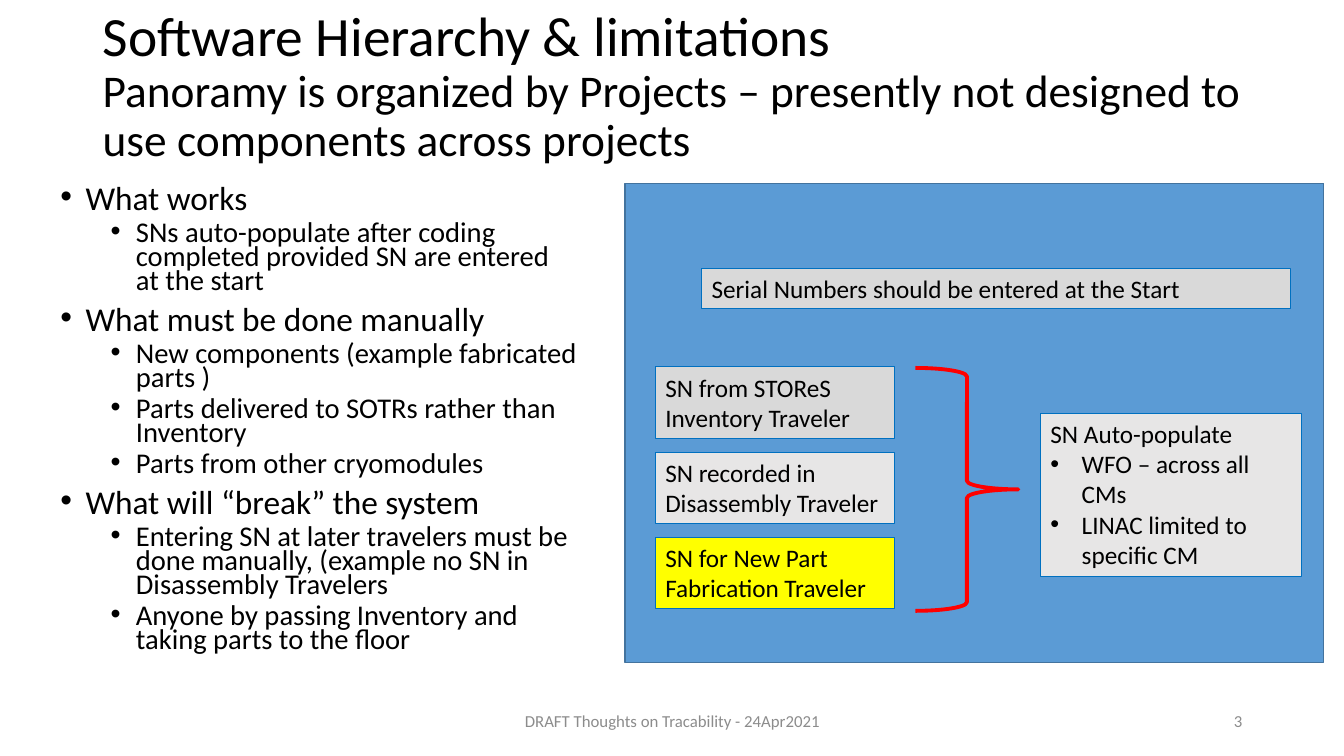
"""Build the software hierarchy and limitations slide."""
from dataclasses import dataclass

from lxml import etree
from pptx import Presentation
from pptx import util as u
from pptx.dml.color import RGBColor
from pptx.enum import shapes, text
from pptx.oxml import ns


@dataclass(frozen=True)
class Theme:
    """Hold the colours, type sizes and font of the slide."""
    font: str = "Calibri"
    ink: str = "000000"
    muted: str = "8C8C8C"
    panel: str = "5B9BD5"
    panel_line: str = "43739E"
    box_line: str = "0070C0"
    grey: str = "D9D9D9"
    light: str = "E7E6E6"
    yellow: str = "FFFF00"
    red: str = "FF0000"
    title: float = 39.6
    subtitle: float = 32.4
    topic: float = 23.8
    detail: float = 20.4
    label: float = 18
    footer: float = 12


THEME = Theme()

TOPICS = {
    "What works": [
        "SNs auto-populate after coding completed provided SN are entered at the start",
    ],
    "What must be done manually": [
        "New components (example fabricated parts )",
        "Parts delivered to SOTRs rather than Inventory",
        "Parts from other cryomodules",
    ],
    "What will “break” the system": [
        "Entering SN at later travelers must be done manually, "
        "(example no SN in Disassembly Travelers",
        "Anyone by passing Inventory and taking parts to the floor",
    ],
}

SOURCES = [
    (["SN from STOReS", "Inventory Traveler"], THEME.grey),
    (["SN recorded in", "Disassembly Traveler"], THEME.light),
    (["SN for New Part", "Fabrication Traveler"], THEME.yellow),
]


def set_all(target, values):
    """Set each named attribute of the target."""
    for name, value in values.items():
        setattr(target, name, value)


def add_run(paragraph, words, size, color=THEME.ink):
    """Add a run in the theme font."""
    run = paragraph.add_run()
    run.text = words
    set_all(run.font, {"name": THEME.font, "size": u.Pt(size)})
    run.font.color.rgb = RGBColor.from_string(color)


def add_bullet(paragraph, left, hanging):
    """Give the paragraph a bullet with a hanging indent."""
    properties = paragraph._p.get_or_add_pPr()
    properties.set("marL", str(u.Inches(left)))
    properties.set("indent", str(-u.Inches(hanging)))
    font = etree.SubElement(properties, ns.qn("a:buFont"))
    font.set("typeface", "Arial")
    etree.SubElement(properties, ns.qn("a:buChar")).set("char", "•")


def next_paragraph(frame):
    """Return the unused first paragraph or a new one."""
    first = frame.paragraphs[0]
    return frame.add_paragraph() if first.runs else first


def add_text_box(slide, place, anchor=text.MSO_ANCHOR.TOP):
    """Add a wrapping text box and return its text frame."""
    frame = slide.shapes.add_textbox(*map(u.Inches, place)).text_frame
    set_all(frame, {"word_wrap": True, "vertical_anchor": anchor})
    return frame


def add_figure(slide, kind, place, fill, line, width):
    """Add a preset shape with its fill and outline."""
    shape = slide.shapes.add_shape(kind, *map(u.Inches, place))
    shape.shadow.inherit = False
    if fill:
        shape.fill.solid()
        shape.fill.fore_color.rgb = RGBColor.from_string(fill)
    else:
        shape.fill.background()
    shape.line.color.rgb = RGBColor.from_string(line)
    shape.line.width = u.Pt(width)
    return shape


def add_label(slide, place, fill, lines, bullets=()):
    """Add an outlined box with plain lines followed by bullets."""
    shape = add_figure(slide, shapes.MSO_SHAPE.RECTANGLE, place, fill, THEME.box_line, 0.75)
    frame = shape.text_frame
    set_all(frame, {"word_wrap": True, "vertical_anchor": text.MSO_ANCHOR.TOP})
    for words in [*lines, *bullets]:
        paragraph = next_paragraph(frame)
        paragraph.alignment = text.PP_ALIGN.LEFT
        if words in bullets:
            add_bullet(paragraph, 0.31, 0.31)
        add_run(paragraph, words, THEME.label)


def add_title(slide):
    """Add the title with its subtitle on the following lines."""
    paragraph = add_text_box(slide, (0.92, 0.14, 11.5, 1.45), text.MSO_ANCHOR.MIDDLE).paragraphs[0]
    paragraph.line_spacing = 0.9
    add_run(paragraph, "Software Hierarchy & limitations", THEME.title)
    paragraph.add_line_break()
    add_run(paragraph, "Panoramy is organized by Projects – presently not designed "
            "to use components across projects", THEME.subtitle)


def add_topics(slide):
    """Add the two-level bullet list."""
    frame = add_text_box(slide, (0.5, 1.82, 5.33, 4.76))
    formats = [
        ({"level": 0, "line_spacing": 0.7, "space_before": u.Pt(10)}, 0.25, THEME.topic),
        ({"level": 1, "line_spacing": 0.7, "space_before": u.Pt(5)}, 0.75, THEME.detail),
    ]
    for topic, details in TOPICS.items():
        for level, words in [(0, topic), *((1, detail) for detail in details)]:
            values, left, size = formats[level]
            paragraph = next_paragraph(frame)
            set_all(paragraph, values)
            add_bullet(paragraph, left, 0.25)
            add_run(paragraph, words, size)


def add_footer(slide, place, words, alignment):
    """Add a muted footer text."""
    paragraph = add_text_box(slide, place, text.MSO_ANCHOR.MIDDLE).paragraphs[0]
    paragraph.alignment = alignment
    add_run(paragraph, words, THEME.footer, THEME.muted)


def add_diagram(slide):
    """Add the panel showing where serial numbers come from."""
    add_figure(slide, shapes.MSO_SHAPE.FLOWCHART_PROCESS, (6.2, 1.82, 6.93, 4.75),
               THEME.panel, THEME.panel_line, 1)
    for index, (lines, fill) in enumerate(SOURCES):
        add_label(slide, (6.5, 3.64 + 0.845 * index, 2.37, 0.71), fill, lines)
    add_figure(slide, shapes.MSO_SHAPE.RIGHT_BRACE, (9.08, 3.65, 1.02, 2.41),
               None, THEME.red, 2.75)
    add_label(slide, (10.32, 4.1, 2.59, 1.62), THEME.light, ["SN Auto-populate"],
              ["WFO – across all CMs", "LINAC limited to specific CM"])
    add_label(slide, (6.96, 2.66, 5.84, 0.4), THEME.grey,
              ["Serial Numbers should be entered at the Start"])


def main():
    """Build and save the presentation."""
    presentation = Presentation()
    set_all(presentation, {"slide_width": u.Inches(13.33), "slide_height": u.Inches(7.5)})
    slide = presentation.slides.add_slide(presentation.slide_layouts[6])
    add_title(slide)
    add_topics(slide)
    add_footer(slide, (4.42, 6.95, 4.5, 0.4), "DRAFT Thoughts on Tracability - 24Apr2021",
               text.PP_ALIGN.CENTER)
    add_footer(slide, (9.42, 6.95, 3, 0.4), "3", text.PP_ALIGN.RIGHT)
    add_diagram(slide)
    presentation.save("out.pptx")


if __name__ == "__main__":
    main()
